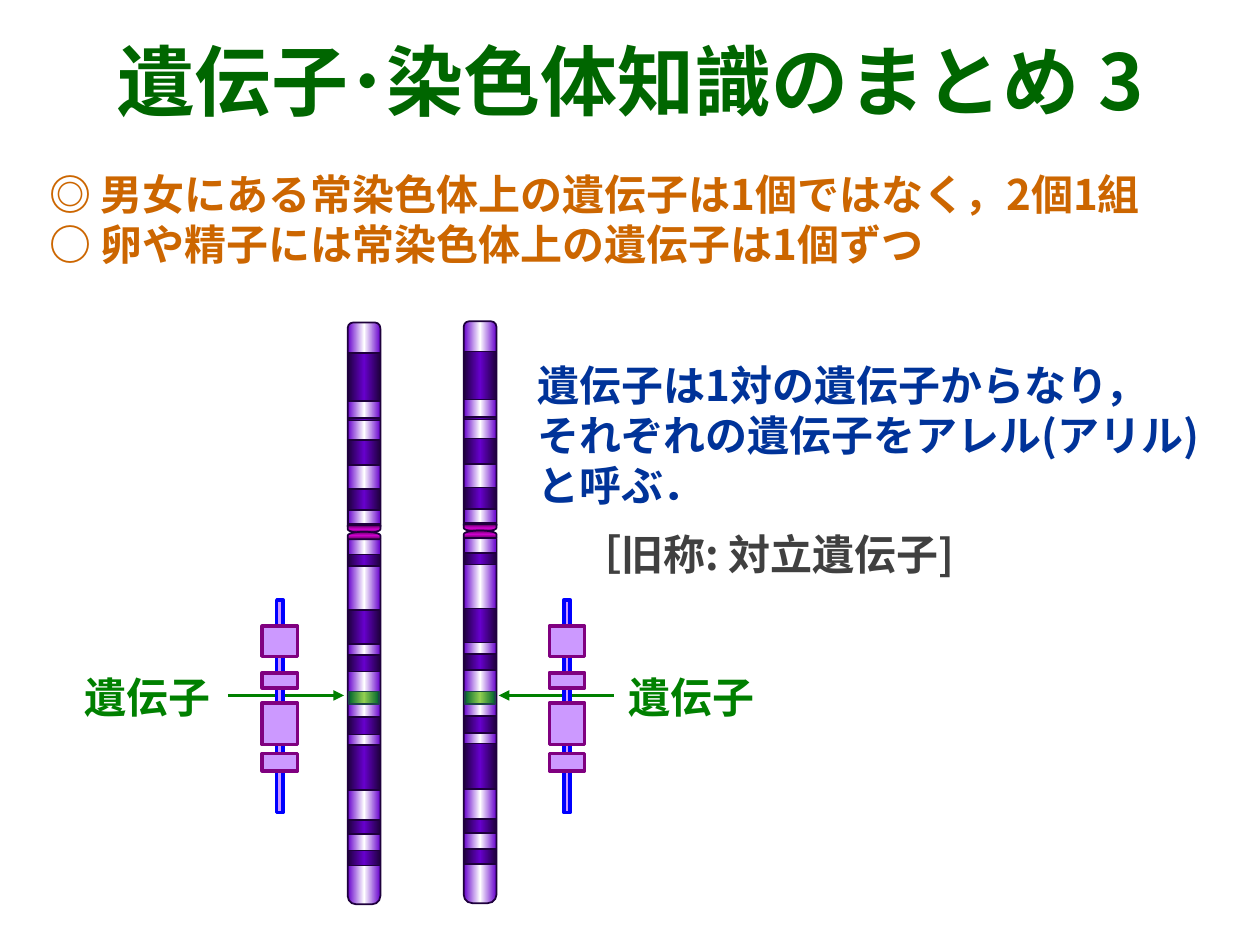
"""Builds a slide on paired chromosomes and alleles."""
from copy import deepcopy

from pptx import Presentation, util as u
from pptx.dml.color import RGBColor
from pptx.enum import shapes, text
from pptx.oxml import ns, xmlchemy

Pt = u.Pt
SHAPE = shapes.MSO_SHAPE
GOTHIC = "Noto Sans CJK JP"
COLORS = {
    "title": "006600", "points": "CC6600", "allele": "003399",
    "former": "404040", "gene": "008000", "outline": "1E003C",
    "locus_outline": "1E4649", "exon": "CC99FF", "exon_outline": "800080",
    "strand": "0000FF",
}
GRADIENTS = {
    "light": ("6600CC", "FFFFFF"), "dark": ("1E003C", "6600CC"),
    "centromere": ("660066", "CC00CC"), "locus": ("00642D", "92D050"),
}
ARMS = [(0, 119.5, 0.167), (119.5, 213, 0.26)]
LIGHT_BANDS = [(123.8, 10.8), (104.4, 10.8)]
DARK_BANDS = [
    (95, 12.2), (132.5, 6.5), (164.2, 19.4), (67, 14.4), (54.7, 1.4),
    (17.3, 27.4), (190, 9.4), (225.4, 10), (241.2, 26), (284.4, 8), (301.7, 8.6),
]
CENTROMERE = [(118.1, 90), (121.7, 270)]
EXONS = [(15.1, 17.3), (41.8, 8.6), (59, 23.8), (87.8, 10)]


def rgb(name):
    """Return the named colour."""
    return RGBColor.from_string(COLORS[name])


def add_part(parent, kind, box, outline, width, solid=None, gradient=None):
    """Add an outlined shape with a solid or a mirrored gradient fill."""
    part = parent.shapes.add_shape(kind, *map(Pt, box))
    part.shadow.inherit = False
    part.line.color.rgb = rgb(outline)
    part.line.width = Pt(width)
    if solid:
        part.fill.solid()
        part.fill.fore_color.rgb = rgb(solid)
        return part
    part.fill.gradient()
    part.fill.gradient_angle = 0
    stops = part._element.spPr.find(".//" + ns.qn("a:gsLst"))
    stops.insert(1, deepcopy(stops[0]))
    edge, middle = GRADIENTS[gradient]
    for stop, color, position in zip(
        part.fill.gradient_stops, (edge, middle, edge), (0, 0.5, 1)
    ):
        stop.color.rgb = RGBColor.from_string(color)
        stop.position = position
    return part


def write_text(holder, box, lines, size, anchor, font=GOTHIC, wrap=True):
    """Place a text holder and write its (text, colour) lines in bold."""
    holder.left, holder.top, holder.width, holder.height = map(Pt, box)
    frame = holder.text_frame
    frame.word_wrap = wrap
    frame.auto_size = text.MSO_AUTO_SIZE.NONE
    frame.vertical_anchor = anchor
    frame.margin_left = frame.margin_right = Pt(7.2)
    frame.margin_top = Pt(3.6 + 0.07 * size)
    frame.margin_bottom = Pt(3.6 - 0.07 * size)
    for index, (words, color) in enumerate(lines):
        paragraph = frame.add_paragraph() if index else frame.paragraphs[0]
        paragraph.line_spacing = Pt(1.19 * size)
        paragraph.space_before = Pt(0)
        run = paragraph.add_run()
        run.text = words
        run.font.size = Pt(size)
        run.font.bold = True
        run.font.name = font
        run.font.color.rgb = rgb(color)
        east_asian = xmlchemy.OxmlElement("a:ea")
        east_asian.set("typeface", GOTHIC)
        run.font._element.find(ns.qn("a:latin")).addnext(east_asian)
    return frame.paragraphs


def add_heading(slide, box):
    """Write the slide title."""
    title, = write_text(slide.shapes.title, box,
                        [("遺伝子･染色体知識のまとめ 3", "title")],
                        44, text.MSO_ANCHOR.MIDDLE)
    title.alignment = text.PP_ALIGN.CENTER


def add_points(slide, box):
    """Write the two key points without list bullets."""
    points = write_text(slide.placeholders[1], box, [
        ("◎ 男女にある常染色体上の遺伝子は1個ではなく，2個1組", "points"),
        ("○ 卵や精子には常染色体上の遺伝子は1個ずつ", "points"),
    ], 24, text.MSO_ANCHOR.MIDDLE)
    for point in points:
        properties = point._p.get_or_add_pPr()
        properties.set("marL", "0")
        properties.set("indent", "0")
        properties.append(xmlchemy.OxmlElement("a:buNone"))


def add_allele_note(slide, box):
    """Write the definition of an allele and its former name."""
    note = slide.shapes.add_textbox(*map(Pt, box))
    former = write_text(note, box, [
        ("遺伝子は1対の遺伝子からなり，", "allele"),
        ("それぞれの遺伝子をアレル(アリル)と呼ぶ．", "allele"),
        ("［旧称: 対立遺伝子]", "former"),
    ], 24, text.MSO_ANCHOR.TOP)[-1]
    former.space_before = Pt(11)
    former._p.get_or_add_pPr().set("marL", str(Pt(24)))


def add_chromosome(slide, left, top, width=18.7):
    """Draw a banded chromosome with its centromere."""
    group = slide.shapes.add_group_shape()
    for offset, height, rounding in ARMS:
        arm = add_part(group, SHAPE.ROUNDED_RECTANGLE,
                       (left, top + offset, width, height),
                       "outline", 1, gradient="light")
        arm.adjustments[0] = rounding
    for gradient, bands in (("light", LIGHT_BANDS), ("dark", DARK_BANDS)):
        for offset, height in bands:
            add_part(group, SHAPE.RECTANGLE, (left, top + offset, width, height),
                     "outline", 1, gradient=gradient)
    thickness = 4.3
    for center, angle in CENTROMERE:
        cap = add_part(group, SHAPE.FLOWCHART_DELAY,
                       (left + (width - thickness) / 2, top + center - width / 2,
                        thickness, width), "outline", 1, gradient="centromere")
        cap.rotation = angle


def add_gene_model(slide, left, top, width=20.2):
    """Draw a DNA strand carrying its exons."""
    group = slide.shapes.add_group_shape()
    strand = 3.6
    add_part(group, SHAPE.RECTANGLE,
             (left + (width - strand) / 2, top, strand, 121.7),
             "strand", 2, solid="exon")
    for offset, height in EXONS:
        add_part(group, SHAPE.RECTANGLE, (left, top + offset, width, height),
                 "exon_outline", 2, solid="exon")


def add_gene_pointer(slide, label_left, start, end, locus_left, y):
    """Label a gene and point an arrow at its locus."""
    arrow = slide.shapes.add_connector(
        shapes.MSO_CONNECTOR.STRAIGHT, Pt(start), Pt(y), Pt(end), Pt(y))
    arrow.line.color.rgb = rgb("gene")
    arrow.line.width = Pt(2)
    head = xmlchemy.OxmlElement("a:tailEnd")
    head.set("type", "triangle")
    arrow.line._get_or_add_ln().append(head)
    arrow._element.spPr.append(xmlchemy.OxmlElement("a:effectLst"))
    box = (label_left, y - 18.7, 87.8, 36)
    label = slide.shapes.add_textbox(*map(Pt, box))
    write_text(label, box, [("遺伝子", "gene")], 24, text.MSO_ANCHOR.TOP,
               font="Arial", wrap=False)
    add_part(slide, SHAPE.RECTANGLE, (locus_left, y - 2.2, 17.3, 7.2),
             "locus_outline", 1, gradient="locus")


def main():
    """Build and save the slide."""
    deck = Presentation()
    deck.slide_width, deck.slide_height = Pt(720), Pt(540)
    slide = deck.slides.add_slide(deck.slide_layouts[1])
    add_heading(slide, (20.2, 14.4, 680.4, 56.9))
    add_points(slide, (20.9, 90.7, 692.6, 65.5))
    add_chromosome(slide, 198.7, 184.3)
    add_chromosome(slide, 265, 183.6)
    add_gene_pointer(slide, 41, 130.3, 196.6, 199.4, 397.4)
    add_gene_pointer(slide, 352, 350.6, 285, 265.7, 397.4)
    add_allele_note(slide, (300.2, 200.2, 399.6, 133.2))
    for left in (149.8, 313.9):
        add_gene_model(slide, left, 342.7)
    deck.save("out.pptx")


if __name__ == "__main__":
    main()
